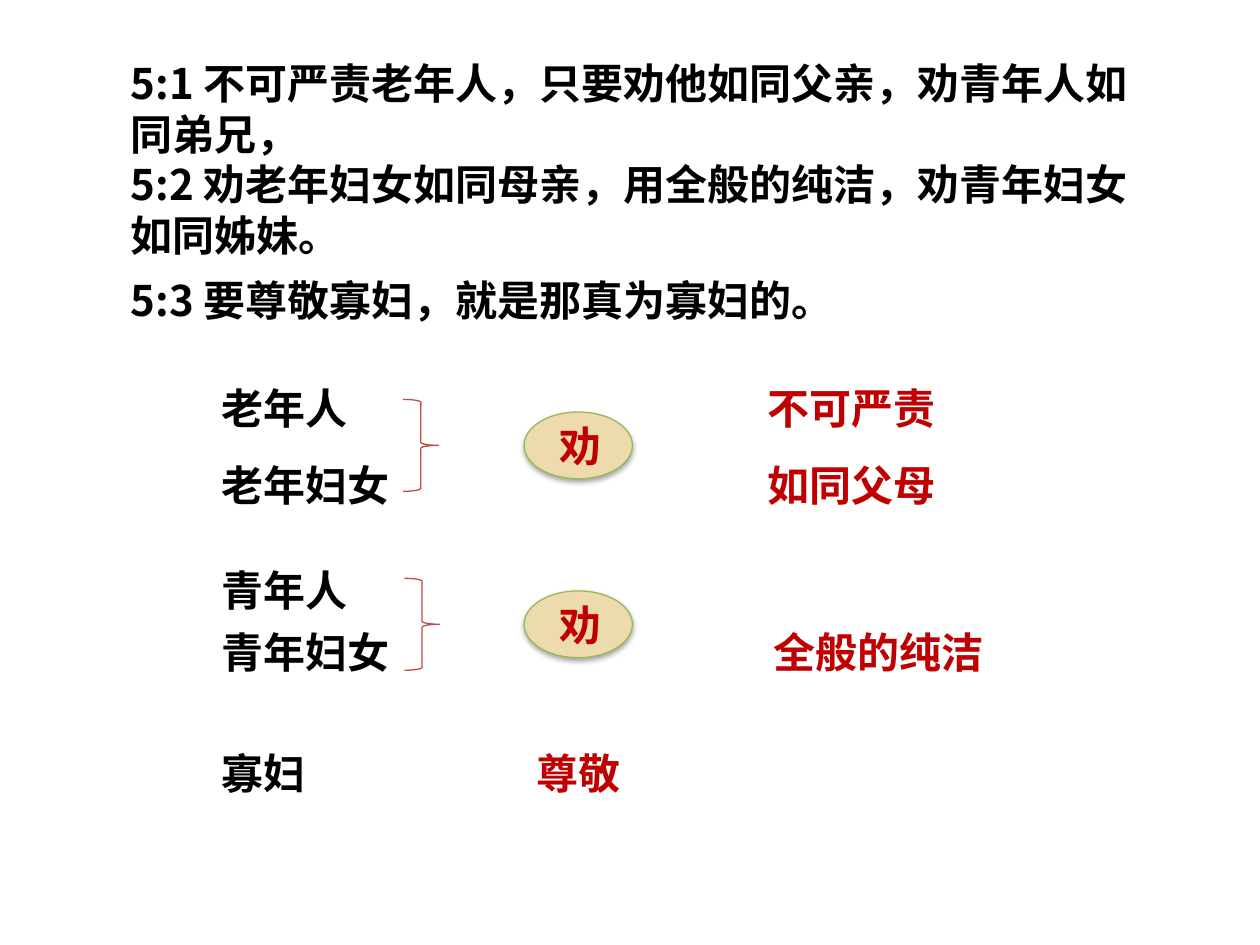
import pptx
import pptx.util
import pptx.dml.color
import pptx.enum.shapes
import pptx.enum.text
import pptx.oxml
import pptx.oxml.ns

Inches, Pt = pptx.util.Inches, pptx.util.Pt
SHAPE = pptx.enum.shapes.MSO_SHAPE
AUTO = pptx.enum.text.MSO_AUTO_SIZE

# Content: verses as (top, width, height, lines); labels as (left, top, width, text)
VERSES = [
    (0.41, 8.37, 1.72, ["5:1 不可严责老年人，只要劝他如同父亲，劝青年人如同弟兄，",
                        "5:2 劝老年妇女如同母亲，用全般的纯洁，劝青年妇女如同姊妹。"]),
    (2.13, 6.96, 0.5, ["5:3 要尊敬寡妇，就是那真为寡妇的。"]),
]
PEOPLE = [
    (1.66, 2.99, 1.2, "老年人"),
    (1.66, 3.6, 1.54, "老年妇女"),
    (1.66, 4.43, 1.2, "青年人"),
    (1.66, 4.92, 1.54, "青年妇女"),
    (1.66, 5.88, 0.87, "寡妇"),
]
ADVICE = [
    (5.99, 2.99, 1.54, "不可严责"),
    (5.99, 3.6, 1.54, "如同父母"),
    (6.04, 4.92, 1.87, "全般的纯洁"),
    (4.16, 5.88, 0.87, "尊敬"),
]
URGE = "劝"
PAIRS = [(3.2, 3.17), (3.21, 4.59)]  # left and top of each brace

THEME = {
    "ink": "000000", "red": "C00000", "sand": "EDDBAD",
    "green": "98B955", "brace": "BF4C48",
    "size": 24, "pitch": 28.8, "line": 0.75,
    "latin": "Calibri", "han": "Noto Sans CJK SC",
}


def tint(name):
    return pptx.dml.color.RGBColor.from_string(THEME[name])


def write(home, box, lines, color="ink", font="latin", wrap=False, pitch=None):
    """Add a bold text box to a slide or group, one paragraph a line."""
    frame = home.add_textbox(*map(Inches, box)).text_frame
    frame.word_wrap = wrap
    frame.auto_size = AUTO.SHAPE_TO_FIT_TEXT
    for i, line in enumerate(lines):
        para = frame.add_paragraph() if i else frame.paragraphs[0]
        if pitch:
            para.line_spacing = Pt(pitch)
        run = para.add_run()
        run.text = line
        run.font.size = Pt(THEME["size"])
        run.font.bold = True
        run.font.color.rgb = tint(color)
        run.font.name = THEME[font]
        east = pptx.oxml.ns.qn("a:ea")
        run.font._element.makeelement(east)
        face = pptx.oxml.parse_xml(
            f'<a:ea {pptx.oxml.ns.nsdecls("a")} typeface="{THEME["han"]}"/>')
        run.font._element.find(pptx.oxml.ns.qn("a:latin")).addnext(face)


def draw(home, kind, box, line, fill=None):
    """Add a preset shape with a thin outline and no shadow."""
    shape = home.add_shape(kind, *map(Inches, box))
    shape.shadow.inherit = False
    shape.line.color.rgb = tint(line)
    shape.line.width = Pt(THEME["line"])
    if fill:
        shape.fill.solid()
        shape.fill.fore_color.rgb = tint(fill)
    else:
        shape.fill.background()
    return shape


def shade(shape):
    """Give a shape a soft shadow straight below it."""
    glow = pptx.oxml.parse_xml(
        f'<a:outerShdw {pptx.oxml.ns.nsdecls("a")} blurRad="{Pt(3.1)}" '
        f'dist="{Pt(1.8)}" dir="5400000" rotWithShape="0">'
        '<a:srgbClr val="000000"><a:alpha val="35000"/></a:srgbClr></a:outerShdw>')
    shape._element.spPr.find(pptx.oxml.ns.qn("a:effectLst")).append(glow)


def main():
    deck = pptx.Presentation()
    deck.slide_width, deck.slide_height = Inches(10), Inches(7.5)
    slide = deck.slides.add_slide(deck.slide_layouts[6])
    shapes = slide.shapes

    # Verses
    for top, wide, high, lines in VERSES:
        pitch = THEME["pitch"] if len(lines) > 1 else None
        write(shapes, (0.94, top, wide, high), lines,
              font="han", wrap=True, pitch=pitch)

    # People on the left, advice in red
    for color, labels in (("ink", PEOPLE), ("red", ADVICE)):
        for left, top, wide, text in labels:
            write(shapes, (left, top, wide, 0.5), [text], color=color)

    # A brace for each pair, with its badge centred beside it
    for left, top in PAIRS:
        draw(shapes, SHAPE.RIGHT_BRACE, (left, top, 0.28, 0.73), "brace")
        badge = shapes.add_group_shape().shapes
        shade(draw(badge, SHAPE.OVAL, (4.16, top + 0.1, 0.86, 0.53),
                   "green", fill="sand"))
        write(badge, (4.34, top + 0.12, 0.53, 0.5), [URGE], color="red")

    deck.save("out.pptx")


if __name__ == "__main__":
    main()
